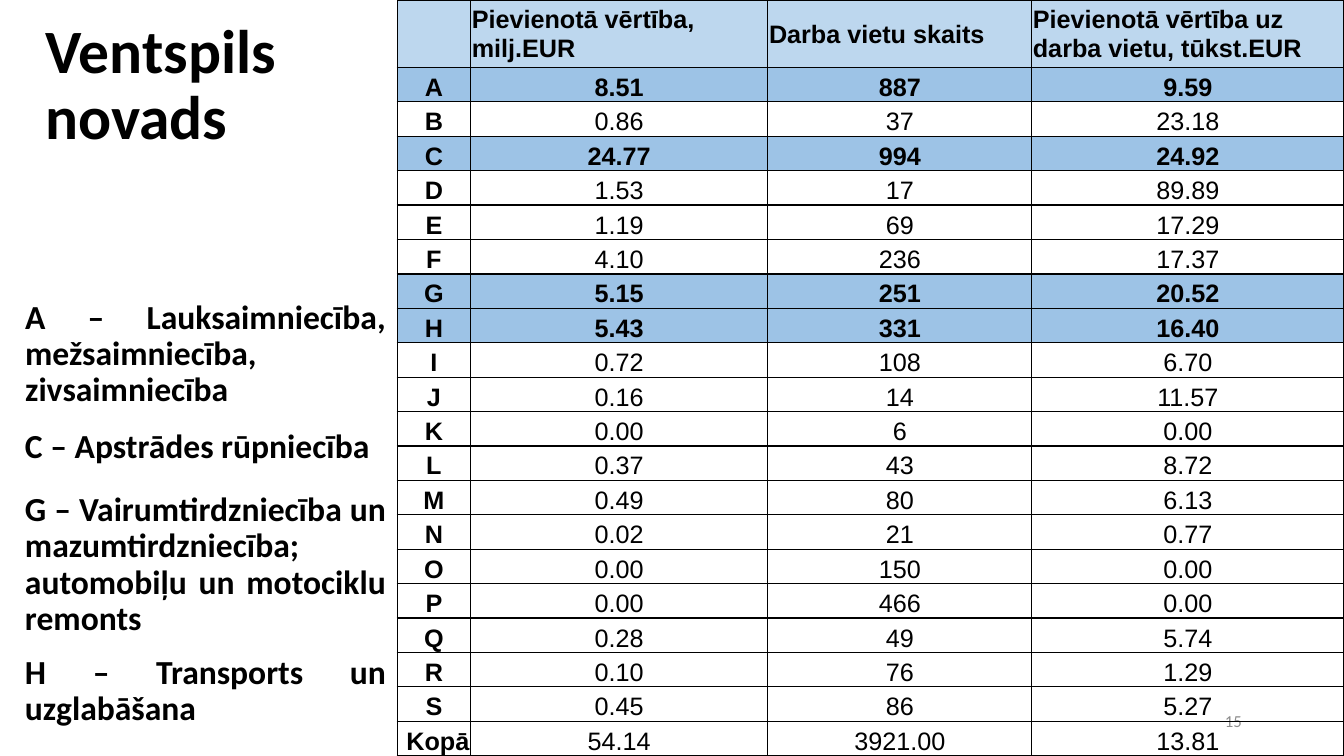
from lxml.etree import SubElement
from pptx import Presentation
from pptx.dml.color import RGBColor as RGB
from pptx.enum.text import MSO_ANCHOR as Anchor, MSO_AUTO_SIZE as AutoSize, PP_ALIGN as Align
from pptx.oxml.ns import qn
from pptx.util import Cm, Pt

COLORS = {"black": "000000", "white": "FFFFFF", "gray": "8C8C8C",
          "header": "BDD7EE", "highlight": "9DC3E6"}
TITLE_FONT = {"name": "Calibri", "size": Pt(44), "bold": True}
LEGEND_FONT = {"name": "Calibri", "size": Pt(24), "bold": True}
NUMBER_FONT = {"name": "Calibri", "size": Pt(12), "bold": False}
BOLD_CELL = {"name": "Arial", "size": Pt(18), "bold": True}
PLAIN_CELL = BOLD_CELL | {"bold": False}
CELL_MARGINS = {"margin_left": Cm(0.03), "margin_right": Cm(0.03),
                "margin_top": Cm(0.03), "margin_bottom": 0}


def write(paragraph, text, font, color="black", **layout):
    run = paragraph.add_run()
    run.text = text
    for key, value in font.items():
        setattr(run.font, key, value)
    run.font.color.rgb = RGB.from_string(COLORS[color])
    for key, value in layout.items():
        setattr(paragraph, key, value)


def add_borders(cell):
    for side in ("a:lnL", "a:lnR", "a:lnT", "a:lnB"):
        line = SubElement(cell._tc.get_or_add_tcPr(), qn(side), w=str(Pt(1)))
        fill = SubElement(line, qn("a:solidFill"))
        SubElement(fill, qn("a:srgbClr"), val=COLORS["black"])


prs = Presentation()
prs.slide_width, prs.slide_height = Cm(33.87), Cm(19.05)
slide = prs.slides.add_slide(prs.slide_layouts[1])
title, first_legend = slide.placeholders

# Page number, behind the table
page_number = slide.shapes.add_textbox(Cm(23.93), Cm(17.65), Cm(7.62), Cm(1.02))
page_number.text_frame.word_wrap = True
page_number.text_frame.vertical_anchor = Anchor.MIDDLE
write(page_number.text_frame.paragraphs[0], "15", NUMBER_FONT, "gray", alignment=Align.RIGHT)

# Title
title.left, title.top, title.width, title.height = Cm(0.89), Cm(0.38), Cm(11.46), Cm(2.16)
title_frame = title.text_frame
title_frame.auto_size = AutoSize.NONE
title_frame.vertical_anchor = Anchor.TOP
title_frame.add_paragraph()
for paragraph, word in zip(title_frame.paragraphs, ("Ventspils", "novads")):
    write(paragraph, word, TITLE_FONT, alignment=Align.LEFT, line_spacing=0.9, space_before=0)

# Value added and jobs by sector
HEADINGS = ("", "Pievienotā vērtība, milj.EUR", "Darba vietu skaits",
            "Pievienotā vērtība uz darba vietu, tūkst.EUR")
SECTORS = [
    ("A", "8.51", "887", "9.59"),
    ("B", "0.86", "37", "23.18"),
    ("C", "24.77", "994", "24.92"),
    ("D", "1.53", "17", "89.89"),
    ("E", "1.19", "69", "17.29"),
    ("F", "4.10", "236", "17.37"),
    ("G", "5.15", "251", "20.52"),
    ("H", "5.43", "331", "16.40"),
    ("I", "0.72", "108", "6.70"),
    ("J", "0.16", "14", "11.57"),
    ("K", "0.00", "6", "0.00"),
    ("L", "0.37", "43", "8.72"),
    ("M", "0.49", "80", "6.13"),
    ("N", "0.02", "21", "0.77"),
    ("O", "0.00", "150", "0.00"),
    ("P", "0.00", "466", "0.00"),
    ("Q", "0.28", "49", "5.74"),
    ("R", "0.10", "76", "1.29"),
    ("S", "0.45", "86", "5.27"),
    ("Kopā", "54.14", "3921.00", "13.81"),
]
HIGHLIGHTED = "ACGH"
HEADER_HEIGHT = 1.7
row_height = (19.05 - HEADER_HEIGHT) / len(SECTORS)

sector_table = slide.shapes.add_table(len(SECTORS) + 1, len(HEADINGS),
                                      Cm(10.01), 0, Cm(23.86), Cm(19.05)).table
sector_table.first_row = sector_table.horz_banding = False
for column, width in zip(sector_table.columns, (1.85, 7.49, 6.65, 7.87)):
    column.width = Cm(width)

for r, values in enumerate([HEADINGS, *SECTORS]):
    sector = values[0]
    is_header = r == 0
    highlighted = sector in tuple(HIGHLIGHTED)
    sector_table.rows[r].height = Cm(HEADER_HEIGHT if is_header else row_height)
    for c, value in enumerate(values):
        cell = sector_table.cell(r, c)
        for key, margin in CELL_MARGINS.items():
            setattr(cell, key, margin)
        cell.vertical_anchor = Anchor.MIDDLE if is_header else Anchor.BOTTOM
        add_borders(cell)
        if is_header or sector <= "L" and sector != "Kopā":
            fill_name = "header" if is_header else "highlight" if highlighted else "white"
            cell.fill.solid()
            cell.fill.fore_color.rgb = RGB.from_string(COLORS[fill_name])
        else:
            cell.fill.background()
        if value:
            bold = is_header or highlighted or c == 0
            align = Align.LEFT if is_header else Align.RIGHT if value == "Kopā" else Align.CENTER
            write(cell.text_frame.paragraphs[0], value, BOLD_CELL if bold else PLAIN_CELL,
                  alignment=align)

# Legend of the highlighted sectors
LEGEND = [
    ("A – Lauksaimniecība, mežsaimniecība, zivsaimniecība", 7.44, 1.47),
    ("C – Apstrādes rūpniecība", 10.69, 1.47),
    ("G – Vairumtirdzniecība un mazumtirdzniecība; automobiļu un motociklu remonts", 12.29, 4.09),
    ("H – Transports un uzglabāšana", 16.38, 2.54),
]
for i, (text, top, height) in enumerate(LEGEND):
    legend = slide.shapes.add_textbox(0, 0, 0, 0) if i else first_legend
    legend.left, legend.top, legend.width, legend.height = Cm(0.38), Cm(top), Cm(9.6), Cm(height)
    legend.text_frame.word_wrap = True
    legend.text_frame.auto_size = AutoSize.NONE
    paragraph = legend.text_frame.paragraphs[0]
    properties = paragraph._p.get_or_add_pPr()
    properties.set("marL", "0")
    properties.set("indent", "0")
    SubElement(properties, qn("a:buNone"))
    write(paragraph, text, LEGEND_FONT, alignment=Align.JUSTIFY, line_spacing=0.9, space_before=0)

prs.save("out.pptx")
